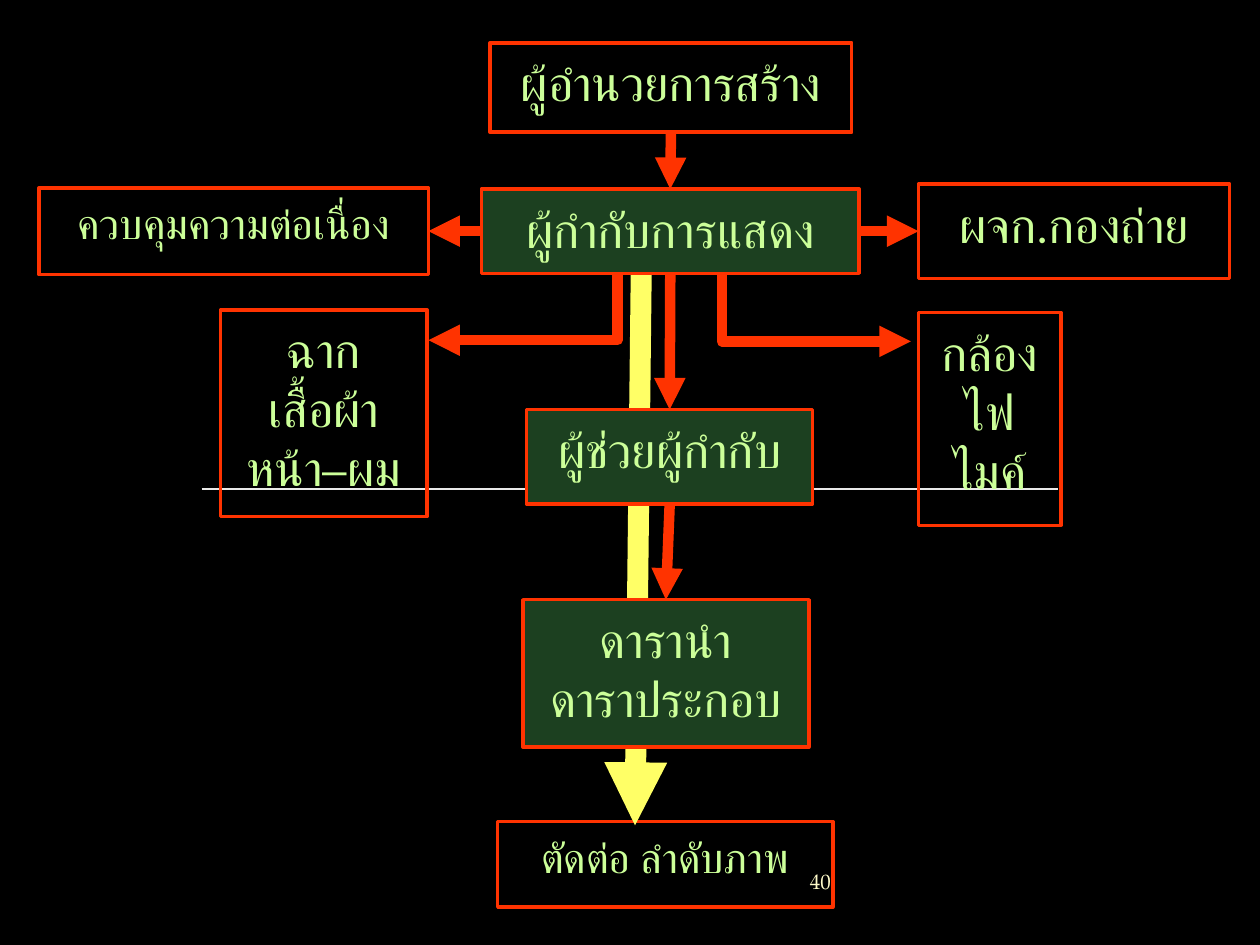
from lxml.etree import SubElement
from pptx import Presentation
from pptx.dml.color import RGBColor
from pptx.enum.shapes import MSO_CONNECTOR as Connector, MSO_SHAPE as Shape
from pptx.enum.text import MSO_ANCHOR as Anchor, PP_ALIGN as Align
from pptx.oxml.ns import qn
from pptx.util import Inches, Pt

FONT = "TeX Gyre Pagella"
RED, YELLOW, GREEN = "FF3300", "FFFF66", "1C4020"
TOP, LEFT, BOTTOM, RIGHT = range(4)


def paint(color_format, value):
    color_format.rgb = RGBColor.from_string(value)


def add_run(paragraph, text, size, color):
    run = paragraph.add_run()
    run.text = text
    run.font.name = FONT
    run.font.size = Pt(size)
    paint(run.font.color, color)
    SubElement(run.font._element, qn("a:cs"), typeface=FONT)


def add_role(slide, lines, left, top, width, height, size=28, fill=None):
    role = slide.shapes.add_shape(
        Shape.RECTANGLE, Inches(left), Inches(top), Inches(width), Inches(height))
    role.shadow.inherit = False
    if fill:
        role.fill.solid()
        paint(role.fill.fore_color, fill)
    else:
        role.fill.background()
    paint(role.line.color, RED)
    role.line.width = Pt(2)
    frame = role.text_frame
    frame.word_wrap = True
    frame.vertical_anchor = Anchor.TOP
    frame.margin_left = frame.margin_right = 0
    frame.margin_top = frame.margin_bottom = Inches(0.08)
    paragraph = frame.paragraphs[0]
    paragraph.alignment = Align.CENTER
    before = SubElement(paragraph._p.get_or_add_pPr(), qn("a:spcBef"))
    SubElement(before, qn("a:spcPct"), val="45000")
    for index, line in enumerate(lines):
        if index:
            paragraph.add_line_break()
        add_run(paragraph, line, size, "CCFF99")
    return role


def add_line(slide, start, end, color, width, arrow=True, kind=Connector.STRAIGHT):
    line = slide.shapes.add_connector(kind, *map(Inches, (*start, *end)))
    paint(line.line.color, color)
    line.line.width = Pt(width)
    if arrow:
        SubElement(line.line._get_or_add_ln(), qn("a:tailEnd"), type="triangle")
    SubElement(line._element.spPr, qn("a:effectLst"))
    return line


def add_link(slide, source, source_side, target, target_side):
    link = add_line(slide, (0, 0), (1, 1), RED, 6)
    link.begin_connect(source, source_side)
    link.end_connect(target, target_side)


def add_elbow(slide, start, end):
    (x1, y1), (x2, y2) = start, end
    middle_x, middle_y = (x1 + x2) / 2, (y1 + y2) / 2
    half_width, half_height = abs(y2 - y1) / 2, abs(x2 - x1) / 2
    to_right = x2 > x1
    near, far = middle_x - half_width, middle_x + half_width
    if to_right:
        near, far = far, near
    elbow = add_line(slide, (near, middle_y - half_height),
                     (far, middle_y + half_height), RED, 6, kind=Connector.ELBOW)
    properties = elbow._element.spPr
    properties.find(qn("a:xfrm")).set("rot", str((270 if to_right else 90) * 60000))
    properties.find(qn("a:prstGeom")).set("prst", "bentConnector2")


def add_page_number(slide, number):
    box = slide.shapes.add_textbox(Inches(6.33), Inches(6.78), Inches(2.83), Inches(0.42))
    box.text_frame.word_wrap = True
    box.text_frame.vertical_anchor = Anchor.MIDDLE
    add_run(box.text_frame.paragraphs[0], number, 12, "FEFAC9")


def main():
    deck = Presentation()
    deck.slide_width, deck.slide_height = Inches(10), Inches(7.5)
    slide = deck.slides.add_slide(deck.slide_layouts[6])
    slide.background.fill.solid()
    paint(slide.background.fill.fore_color, "000000")

    for left in (1.6, 5.15):
        add_line(slide, (left, 3.88), (left + 3.25, 3.88), "E9E9E8", 0.75, arrow=False)
    add_page_number(slide, "40")

    add_role(slide, ["ตัดต่อ ลำดับภาพ"], 3.95, 6.52, 2.66, 0.68, size=24)
    add_line(slide, (5.09, 2.1), (5.04, 6.55), YELLOW, 12)

    director = add_role(slide, ["ผู้กำกับการแสดง"], 3.82, 1.5, 3, 0.67, fill=GREEN)
    producer = add_role(slide, ["ผู้อำนวยการสร้าง"], 3.89, 0.34, 2.87, 0.71)
    add_role(slide, ["กล้อง", "ไฟ", "ไมค์"], 7.29, 2.48, 1.13, 1.69)
    cast = add_role(slide, ["ดารานำ", "ดาราประกอบ"], 4.15, 4.76, 2.27, 1.17, fill=GREEN)
    assistant = add_role(slide, ["ผู้ช่วยผู้กำกับ"], 4.18, 3.25, 2.27, 0.75, fill=GREEN)
    manager = add_role(slide, ["ผจก.กองถ่าย"], 7.29, 1.46, 2.47, 0.75)
    continuity = add_role(slide, ["ควบคุมความต่อเนื่อง"], 0.31, 1.49, 3.09, 0.69, size=24)
    add_role(slide, ["ฉาก", "เสื้อผ้า", "หน้า–ผม"], 1.75, 2.46, 1.64, 1.64)

    add_link(slide, producer, BOTTOM, director, TOP)
    add_link(slide, director, BOTTOM, assistant, TOP)
    add_link(slide, assistant, BOTTOM, cast, TOP)
    add_link(slide, director, RIGHT, manager, LEFT)
    add_link(slide, director, LEFT, continuity, RIGHT)
    add_elbow(slide, (5.73, 2.18), (7.23, 2.71))
    add_elbow(slide, (4.9, 2.18), (3.4, 2.7))

    deck.save("out.pptx")


if __name__ == "__main__":
    main()
